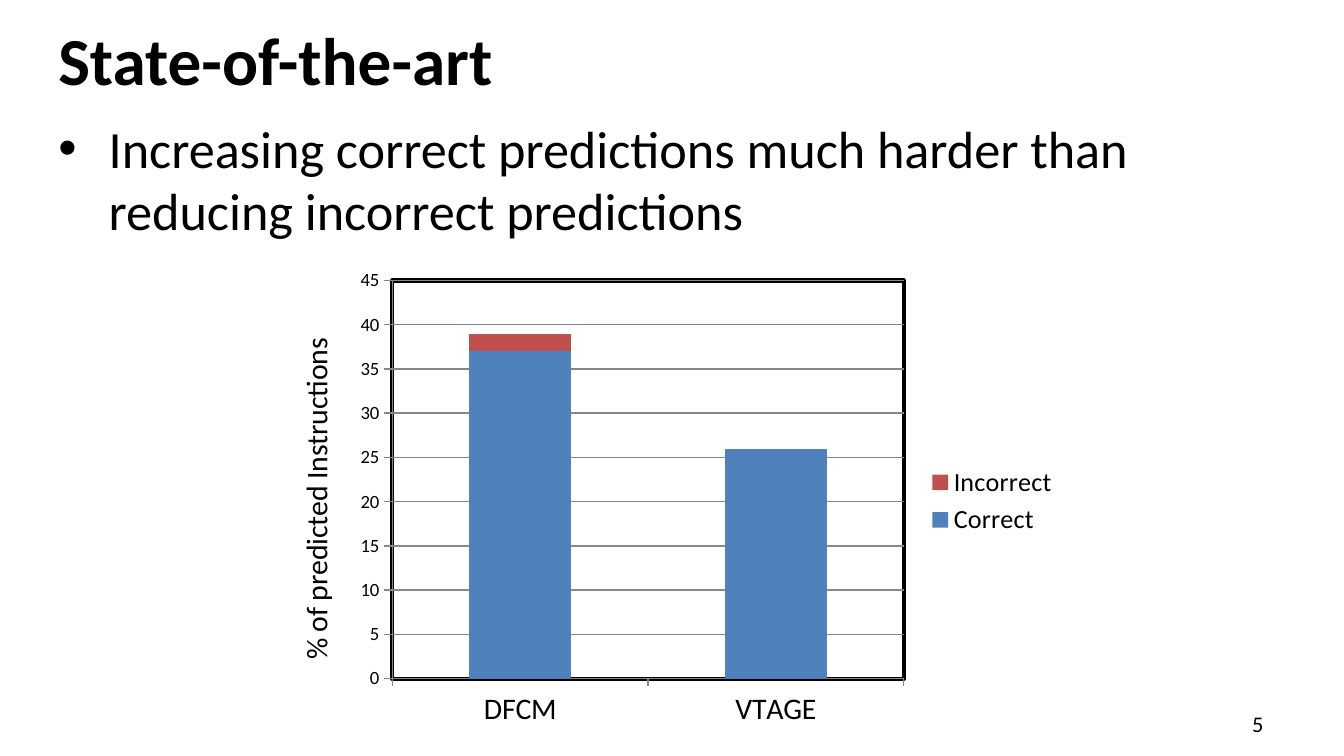
from lxml.etree import SubElement
from pptx import Presentation
from pptx.chart.data import CategoryChartData
from pptx.dml.color import RGBColor
from pptx.enum.chart import XL_CHART_TYPE, XL_LEGEND_POSITION, XL_TICK_MARK
from pptx.enum.text import MSO_ANCHOR, MSO_AUTO_SIZE, PP_ALIGN
from pptx.oxml import parse_xml
from pptx.oxml.ns import nsdecls, qn
from pptx.util import Pt

BLACK = RGBColor(0x00, 0x00, 0x00)
GRAY = RGBColor(0x86, 0x86, 0x86)
BLUE = RGBColor(0x4F, 0x81, 0xBD)
RED = RGBColor(0xC0, 0x50, 0x4D)
FONT = "Calibri"


def style_font(font, size, bold=False):
    font.name = FONT
    font.size = Pt(size)
    font.bold = bold
    font.color.rgb = BLACK


def write_text(shape, box, text, size, align, anchor, bold=False):
    shape.left, shape.top, shape.width, shape.height = [Pt(v) for v in box]
    frame = shape.text_frame
    frame.word_wrap = True
    frame.auto_size = MSO_AUTO_SIZE.NONE
    frame.vertical_anchor = anchor
    paragraph = frame.paragraphs[0]
    paragraph.alignment = align
    run = paragraph.add_run()
    run.text = text
    style_font(run.font, size, bold)


prs = Presentation()
prs.slide_width, prs.slide_height = Pt(720), Pt(405)
slide = prs.slides.add_slide(prs.slide_layouts[1])

# Title, bullet and page number
write_text(slide.shapes.title, (24, 4.5, 672, 54), "State-of-the-art",
           36, PP_ALIGN.LEFT, MSO_ANCHOR.MIDDLE, bold=True)
write_text(slide.placeholders[1], (24, 58.5, 672, 317),
           "Increasing correct predictions much harder than reducing incorrect predictions",
           28, PP_ALIGN.LEFT, MSO_ANCHOR.TOP)
page_number = slide.shapes.add_textbox(0, 0, 0, 0)
write_text(page_number, (516, 378, 168, 19), "5",
           12, PP_ALIGN.RIGHT, MSO_ANCHOR.MIDDLE)

# Prediction chart
predictions = CategoryChartData()
predictions.categories = ["DFCM", "VTAGE"]
predictions.add_series("Correct", [37, 26])
predictions.add_series("Incorrect", [2, 0])
chart = slide.shapes.add_chart(XL_CHART_TYPE.COLUMN_STACKED, Pt(146), Pt(140),
                               Pt(428), Pt(257), predictions).chart
chart.has_title = False
style_font(chart.font, 10)

bars = chart.plots[0]
bars.gap_width = 150
bars.overlap = 100
bars.vary_by_categories = False
for series, color in zip(bars.series, (BLUE, RED)):
    series.format.fill.solid()
    series.format.fill.fore_color.rgb = color

# Axes
instructions = chart.value_axis
instructions.minimum_scale = 0
instructions.maximum_scale = 45
instructions.major_unit = 5
instructions.has_major_gridlines = True
style_font(instructions.tick_labels.font, 10)
predictors = chart.category_axis
style_font(predictors.tick_labels.font, 16)
for axis in (instructions, predictors):
    axis.major_tick_mark = XL_TICK_MARK.OUTSIDE
for line in (instructions.format.line, predictors.format.line,
             instructions.major_gridlines.format.line):
    line.color.rgb = GRAY
    line.width = Pt(0.75)
axis_title = instructions.axis_title.text_frame.paragraphs[0].add_run()
axis_title.text = "% of predicted Instructions"
style_font(axis_title.font, 16)

# Legend
chart.has_legend = True
chart.legend.position = XL_LEGEND_POSITION.RIGHT
chart.legend.include_in_layout = False
style_font(chart.legend.font, 14)

# Plot area: position, white fill and heavy black frame
plot_area = bars._element.getparent()
for old_layout in plot_area.findall(qn("c:layout")):
    plot_area.remove(old_layout)
layout = parse_xml(f"<c:layout {nsdecls('c')}/>")
manual = SubElement(layout, qn("c:manualLayout"))
for tag, value in (("layoutTarget", "inner"), ("xMode", "edge"), ("yMode", "edge"),
                   ("x", "0.15"), ("y", "0.04"), ("w", "0.64"), ("h", "0.83")):
    SubElement(manual, qn(f"c:{tag}")).set("val", value)
plot_area.insert(0, layout)
plot_area.append(parse_xml(
    f'<c:spPr {nsdecls("c", "a")}>'
    '<a:solidFill><a:srgbClr val="FFFFFF"/></a:solidFill>'
    f'<a:ln w="{Pt(2.25)}"><a:solidFill><a:srgbClr val="{BLACK}"/></a:solidFill></a:ln>'
    '</c:spPr>'))

prs.save("out.pptx")
